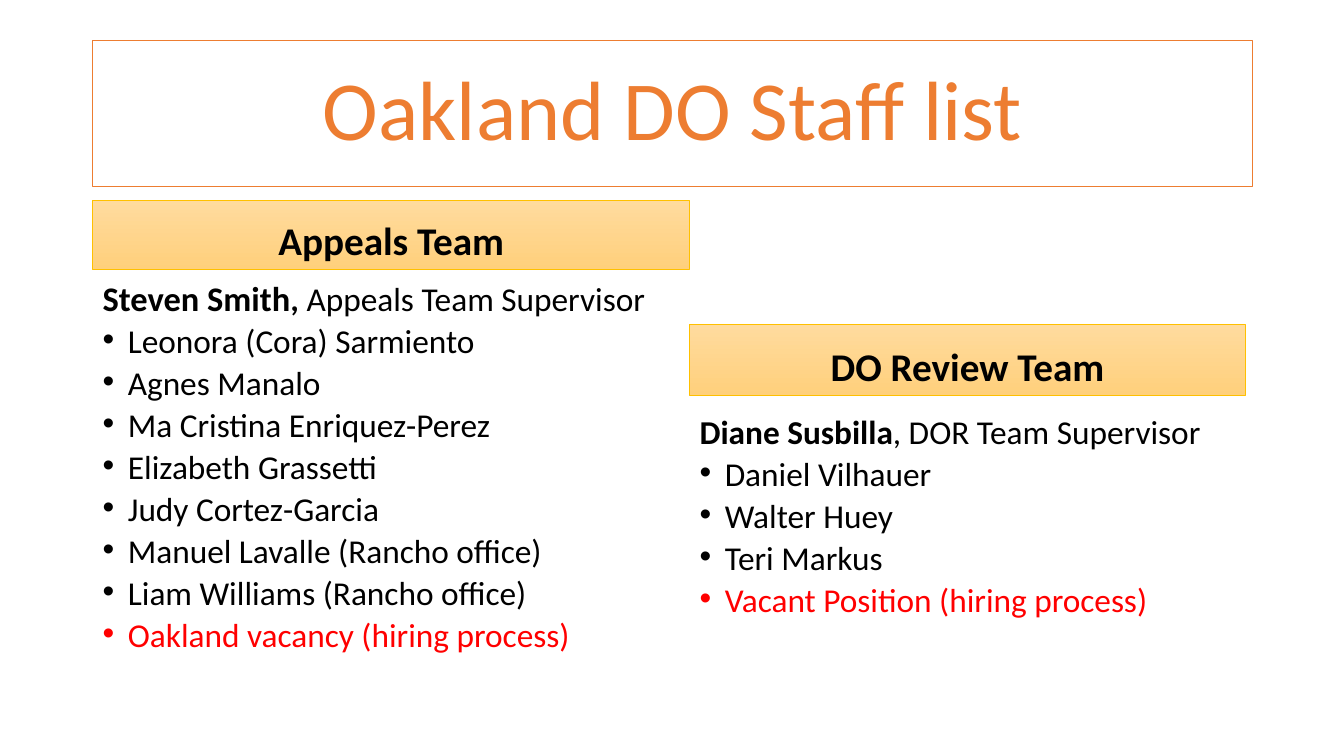
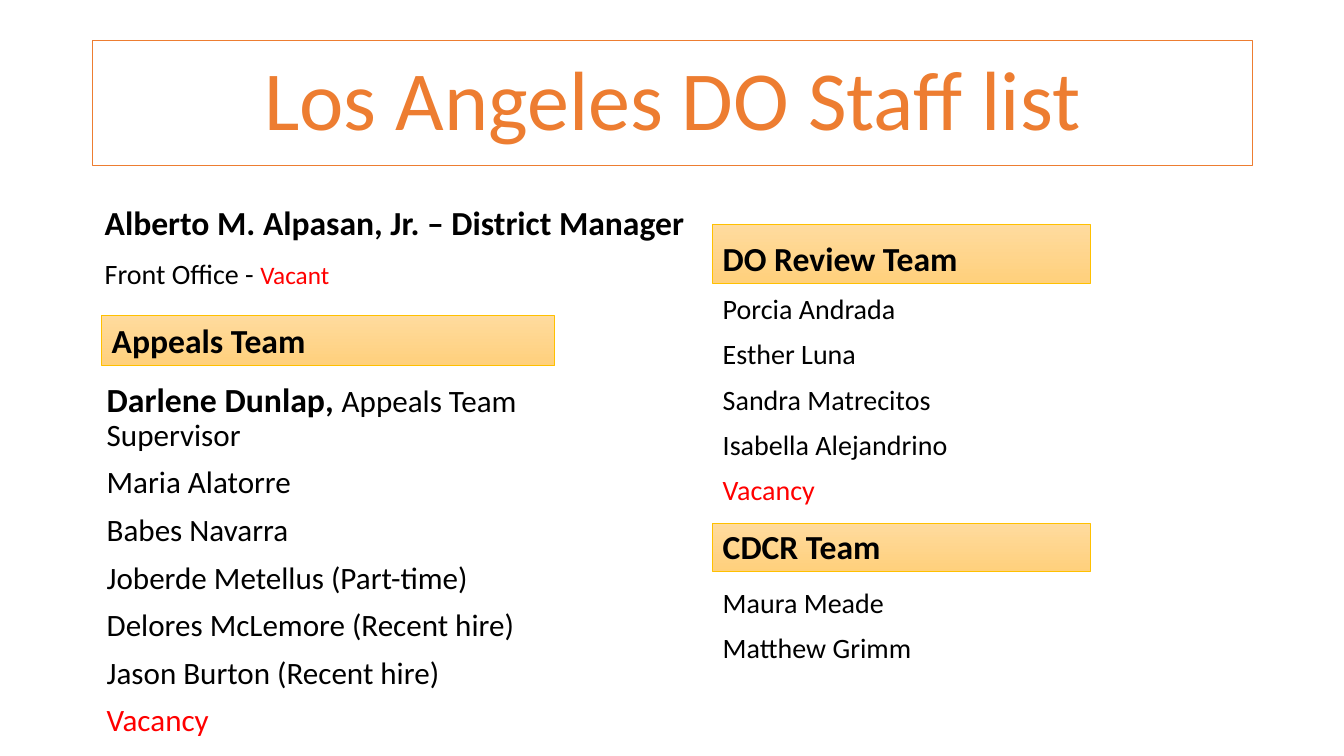
from dataclasses import dataclass

from lxml import etree
from pptx import Presentation
from pptx.dml.color import RGBColor
from pptx.enum.shapes import MSO_SHAPE
from pptx.enum.text import MSO_ANCHOR, PP_ALIGN
from pptx.oxml.ns import qn
from pptx.util import Inches, Pt

RECTANGLE = MSO_SHAPE.RECTANGLE
TOP, MIDDLE, BOTTOM = MSO_ANCHOR.TOP, MSO_ANCHOR.MIDDLE, MSO_ANCHOR.BOTTOM
LEFT, CENTER = PP_ALIGN.LEFT, PP_ALIGN.CENTER

ORANGE = RGBColor(0xED, 0x7D, 0x31)
GOLD = RGBColor(0xFF, 0xC0, 0x00)
BAND_TOP = RGBColor(0xFF, 0xDB, 0x9E)
BAND_BOTTOM = RGBColor(0xFF, 0xD0, 0x7C)
BLACK = RGBColor(0x00, 0x00, 0x00)
RED = RGBColor(0xFF, 0x00, 0x00)

FONT = "Calibri"
MARGIN, TITLE_TOP, TITLE_WIDTH = 0.92, 0.4, 11.5
BULLET_INDENT = 0.25


@dataclass
class Box:
    """A rectangle in inches."""
    left: float
    top: float
    width: float
    height: float

    def emu(self):
        return [Inches(n) for n in (self.left, self.top, self.width, self.height)]


@dataclass
class Span:
    text: str
    size: float = None
    bold: bool = None
    color: RGBColor = None


@dataclass
class TextStyle:
    size: float
    bold: bool = False
    color: RGBColor = BLACK
    align: PP_ALIGN = LEFT
    spacing: float = 0.9
    before: float = 10


@dataclass
class Line:
    """One paragraph: its spans and whether it has a bullet."""
    spans: list
    bulleted: bool = False


def plain(*names):
    return [Line([Span(name)]) for name in names]


def bulleted(*names):
    return [Line([Span(name)], True) for name in names]


def vacancy(text, has_bullet=False):
    return Line([Span(text, color=RED)], has_bullet)


def add_bullet(para):
    properties = para._p.get_or_add_pPr()
    properties.set("marL", str(Inches(BULLET_INDENT)))
    properties.set("indent", str(-Inches(BULLET_INDENT)))
    etree.SubElement(properties, qn("a:buFont")).set("typeface", "Arial")
    etree.SubElement(properties, qn("a:buChar")).set("char", "•")


def set_font(font, size, bold, color):
    font.name = FONT
    if size is not None:
        font.size = Pt(size)
    if bold is not None:
        font.bold = bold
    if color is not None:
        font.color.rgb = color


def write(shape, lines, style, anchor=TOP):
    frame = shape.text_frame
    frame.word_wrap = True
    frame.vertical_anchor = anchor
    for index, line in enumerate(lines):
        para = frame.add_paragraph() if index else frame.paragraphs[0]
        para.alignment = style.align
        para.line_spacing = style.spacing
        if index:
            para.space_before = Pt(style.before)
        if line.bulleted:
            add_bullet(para)
        only = line.spans[0] if len(line.spans) == 1 else Span("")
        set_font(para.font, only.size or style.size, style.bold, only.color or style.color)
        for span in line.spans:
            run = para.add_run()
            run.text = span.text
            if span is not only:
                set_font(run.font, span.size, span.bold, span.color)


def add_text(page, box, lines, style, anchor=TOP):
    write(page.shapes.add_textbox(*box.emu()), lines, style, anchor)


def add_rectangle(page, box, line_color, line_width):
    shape = page.shapes.add_shape(RECTANGLE, *box.emu())
    shape.shadow.inherit = False
    shape.line.color.rgb = line_color
    shape.line.width = Pt(line_width)
    return shape


def add_title(page, text, height):
    frame = add_rectangle(page, Box(MARGIN, TITLE_TOP, TITLE_WIDTH, height), ORANGE, 0.75)
    frame.fill.background()
    write(frame, plain(text), TextStyle(60, color=ORANGE, align=CENTER), MIDDLE)


def add_band(page, box, name, style):
    band = add_rectangle(page, box, GOLD, 0.5)
    band.fill.gradient()
    band.fill.gradient_angle = 270
    for stop, position, color in zip(band.fill.gradient_stops, (0, 1), (BAND_TOP, BAND_BOTTOM)):
        stop.position = position
        stop.color.rgb = color
    write(band, plain(name), style, BOTTOM)


def add_team(page, box, name, people, heading, listing, band, gap, shift=0):
    """Fill a box with a band of the given height and, after a gap, the people."""
    add_band(page, Box(box.left, box.top, box.width, band), name, heading)
    used = band + gap
    people_box = Box(box.left + shift, box.top + used, box.width, box.height - used)
    add_text(page, people_box, people, listing)


def add_oakland(page):
    add_title(page, "Oakland DO Staff list", 1.45)
    heading = TextStyle(28, bold=True, align=CENTER)
    listing = TextStyle(23.8, spacing=0.7)
    appeals = [
        Line([Span("Steven Smith", 24.6, True), Span(", ", bold=True),
              Span("Appeals Team Supervisor")]),
        *bulleted("Leonora (Cora) Sarmiento", "Agnes Manalo", "Ma Cristina Enriquez-Perez",
                  "Elizabeth Grassetti", "Judy Cortez-Garcia",
                  "Manuel Lavalle (Rancho office)", "Liam Williams (Rancho office)"),
        vacancy("Oakland vacancy (hiring process)", True),
    ]
    review = [
        Line([Span("Diane Susbilla", bold=True), Span(", DOR Team Supervisor")]),
        *bulleted("Daniel Vilhauer", "Walter Huey", "Teri Markus"),
        vacancy("Vacant Position (hiring process)", True),
    ]
    add_team(page, Box(MARGIN, 1.99, 5.92, 4.91), "Appeals Team", appeals,
             heading, listing, band=0.68, gap=0.14)
    add_team(page, Box(MARGIN + 5.92, 3.22, 5.51, 3.17), "DO Review Team", review,
             heading, listing, band=0.7, gap=0.22)


def add_management(page, box):
    """Write the manager in the upper part of the box and the front office below."""
    split = 0.55 * box.height
    add_text(page, Box(box.left, box.top, box.width, split),
             plain("Alberto M. Alpasan, Jr. – District Manager"),
             TextStyle(24, bold=True), BOTTOM)
    add_text(page, Box(box.left, box.top + split, box.width, box.height - split),
             [Line([Span("Front Office - "), Span("Vacant", 18, color=RED)])],
             TextStyle(20), BOTTOM)


def add_los_angeles(page):
    add_title(page, "Los Angeles DO Staff list", 1.24)
    add_management(page, Box(0.94, 1.88, 5.98, 1.05))
    heading = TextStyle(24, bold=True)
    appeals = [
        Line([Span("Darlene Dunlap, ", 24.1, True), Span("Appeals Team Supervisor")]),
        *plain("Maria Alatorre", "Babes Navarra", "Joberde Metellus (Part-time)",
               "Delores McLemore (Recent hire)", "Jason Burton (Recent hire)"),
        vacancy("Vacancy"),
    ]
    review = [
        *plain("Porcia Andrada", "Esther Luna", "Sandra Matrecitos", "Isabella Alejandrino"),
        vacancy("Vacancy"),
    ]
    add_team(page, Box(1.01, 3.13, 4.49, 3.97), "Appeals Team", appeals,
             heading, TextStyle(22.2), band=0.5, gap=0.12, shift=-0.05)
    add_team(page, Box(7.07, 2.23, 3.74, 2.8), "DO Review Team", review,
             heading, TextStyle(20, spacing=1.1, before=6), band=0.58, gap=0)
    add_team(page, Box(7.07, 5.19, 3.74, 1.51), "CDCR Team",
             plain("Maura Meade", "Matthew Grimm"),
             heading, TextStyle(20), band=0.48, gap=0.13)


def main():
    deck = Presentation()
    deck.slide_width, deck.slide_height = Inches(13.33), Inches(7.5)
    blank = deck.slide_layouts[6]
    for add_content in (add_oakland, add_los_angeles):
        add_content(deck.slides.add_slide(blank))
    deck.save("out.pptx")


if __name__ == "__main__":
    main()
